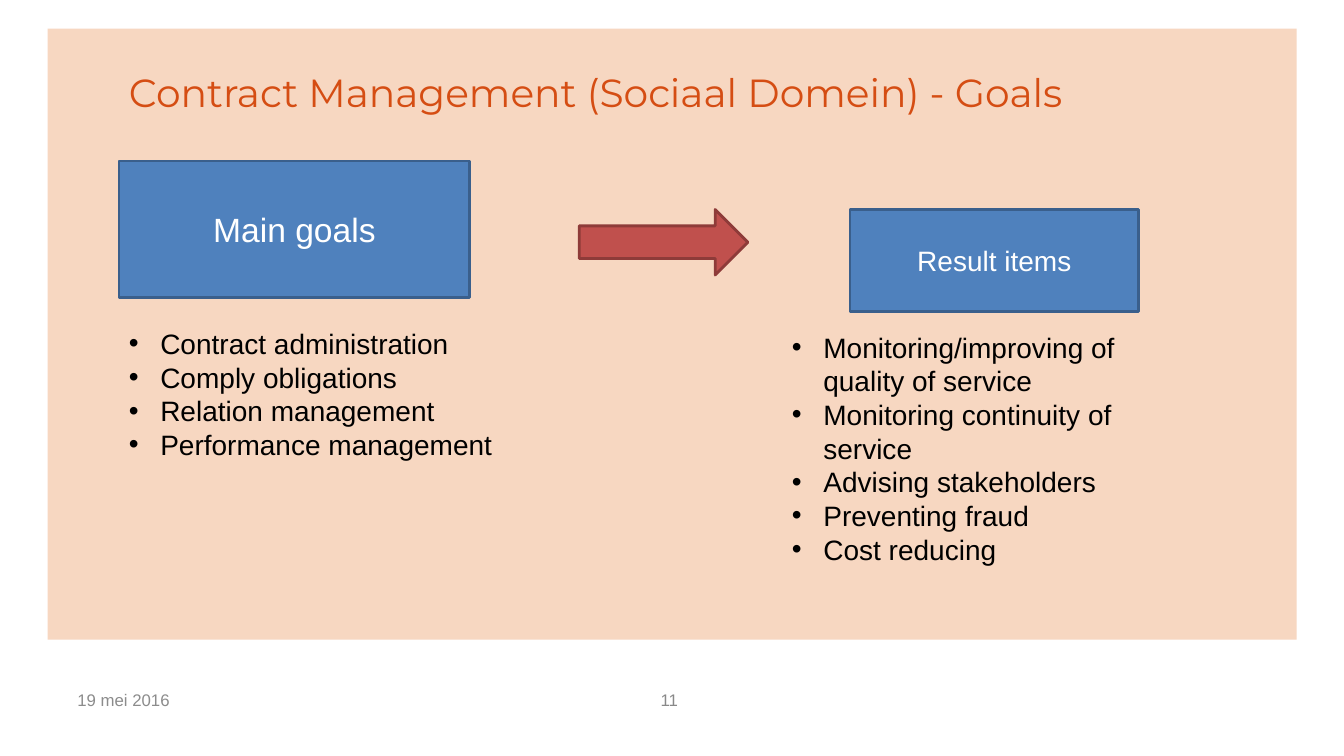
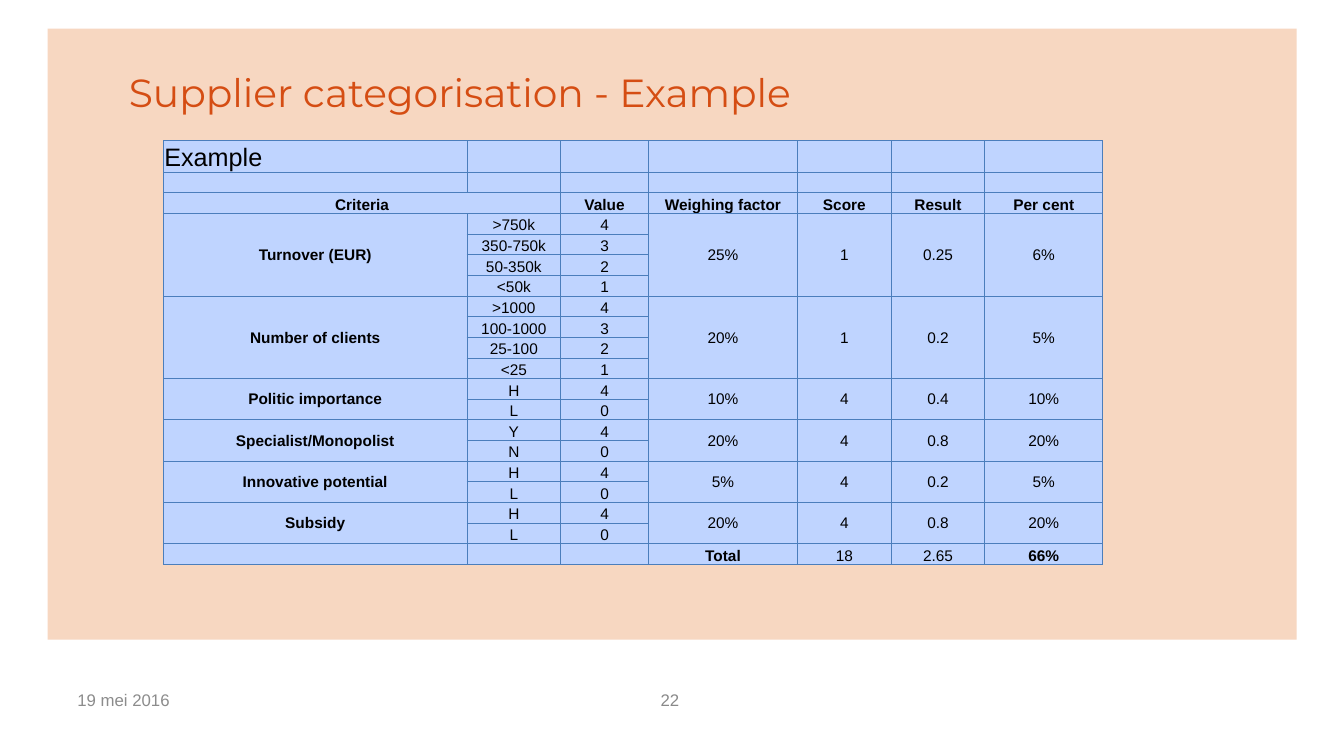
"""Build two contract management slides: goals and a supplier scoring example."""
from lxml import etree
from pptx import Presentation
from pptx.dml.color import RGBColor
from pptx.enum import shapes, text
from pptx.oxml import ns
from pptx.util import Cm, Pt

PEACH = RGBColor(0xF7, 0xD7, 0xC1)
ORANGE = RGBColor(0xD5, 0x4D, 0x13)
NUMBER_GREY = RGBColor(0x89, 0x89, 0x89)
DATE_GREY = RGBColor(0x8C, 0x8C, 0x8C)
BLUE = RGBColor(0x4F, 0x81, 0xBD)
BLUE_EDGE = RGBColor(0x3A, 0x5F, 0x8C)
RED = RGBColor(0xC0, 0x50, 0x4D)
RED_EDGE = RGBColor(0x8E, 0x3B, 0x39)
CELL_BLUE = RGBColor(0xBF, 0xD4, 0xFF)
GRID_BLUE = RGBColor(0x4B, 0x7E, 0xBC)
BLACK = RGBColor(0, 0, 0)
WHITE = RGBColor(255, 255, 255)

BODY_FONT = "Arial"
TITLE_FONT = "Montserrat"
MIDDLE = text.MSO_ANCHOR.MIDDLE
BOTTOM = text.MSO_ANCHOR.BOTTOM
TOP = text.MSO_ANCHOR.TOP
CENTER = text.PP_ALIGN.CENTER
RECTANGLE = shapes.MSO_SHAPE.RECTANGLE

COLUMN_WIDTHS = (7.65, 2.36, 2.21, 3.76, 2.36, 2.36, 2.97)
CAPTION_HEIGHT, ROW_HEIGHT = 0.8, 0.52
HEADINGS = {0: "Criteria", 2: "Value", 3: "Weighing factor",
            4: "Score", 5: "Result", 6: "Per cent"}
CRITERIA = [
    ("Turnover (EUR)", {">750k": 4, "350-750k": 3, "50-350k": 2, "<50k": 1},
     ("25%", "1", "0.25", "6%")),
    ("Number of clients", {">1000": 4, "100-1000": 3, "25-100": 2, "<25": 1},
     ("20%", "1", "0.2", "5%")),
    ("Politic importance", {"H": 4, "L": 0}, ("10%", "4", "0.4", "10%")),
    ("Specialist/Monopolist", {"Y": 4, "N": 0}, ("20%", "4", "0.8", "20%")),
    ("Innovative potential", {"H": 4, "L": 0}, ("5%", "4", "0.2", "5%")),
    ("Subsidy", {"H": 4, "L": 0}, ("20%", "4", "0.8", "20%")),
]
TOTALS = ("Total", "18", "2.65", "66%")


def set_font(para, size, color, name=BODY_FONT, bold=False):
    para.font.name = name
    para.font.size = Pt(size)
    para.font.bold = bold
    para.font.color.rgb = color


def add_text(page, place, words, size, color, name=BODY_FONT, anchor=MIDDLE):
    box = page.shapes.add_textbox(*map(Cm, place))
    frame = box.text_frame
    frame.word_wrap = True
    frame.vertical_anchor = anchor
    frame.text = words
    for para in frame.paragraphs:
        set_font(para, size, color, name)
    return box


def add_bullets(page, place, items):
    box = add_text(page, place, "", 20, BLACK, anchor=TOP)
    frame = box.text_frame
    for index, item in enumerate(items):
        para = frame.add_paragraph() if index else frame.paragraphs[0]
        para.text = item
        props = para._p.get_or_add_pPr()
        for child in list(props):
            props.remove(child)
        props.set("marL", str(Cm(0.79)))
        props.set("indent", str(Cm(-0.79)))
        etree.SubElement(props, ns.qn("a:buFont"), typeface=BODY_FONT)
        etree.SubElement(props, ns.qn("a:buChar"), char="•")
        set_font(para, 20, BLACK)


def add_block(page, kind, place, fill, edge=None, words="", size=20):
    block = page.shapes.add_shape(kind, *map(Cm, place))
    block.shadow.inherit = False
    block.fill.solid()
    block.fill.fore_color.rgb = fill
    if edge is None:
        block.line.fill.background()
    else:
        block.line.color.rgb = edge
        block.line.width = Pt(2)
    if words:
        block.text_frame.text = words
        block.text_frame.vertical_anchor = MIDDLE
        para = block.text_frame.paragraphs[0]
        para.alignment = CENTER
        set_font(para, size, WHITE)


def add_page(deck, title, number):
    page = deck.slides.add_slide(deck.slide_layouts[6])
    add_block(page, RECTANGLE, (1.2, 0.72, 31.48, 15.4), PEACH)
    add_text(page, (16.4, 17.12, 2.95, 1.02), str(number), 12, NUMBER_GREY)
    add_text(page, (3, 1.12, 28.34, 2.41), title, 28, ORANGE, TITLE_FONT)
    add_text(page, (1.7, 17.12, 7.9, 1.02), "19 mei 2016", 12, DATE_GREY)
    return page


def style_cell(cell):
    cell.margin_left = cell.margin_right = cell.margin_top = Cm(0.02)
    cell.margin_bottom = 0
    props = cell._tc.get_or_add_tcPr()
    for side in ("lnL", "lnR", "lnT", "lnB"):
        line = etree.SubElement(props, ns.qn(f"a:{side}"), w=str(Pt(0.75)))
        fill = etree.SubElement(line, ns.qn("a:solidFill"))
        etree.SubElement(fill, ns.qn("a:srgbClr"), val=str(GRID_BLUE))
    cell.fill.solid()
    cell.fill.fore_color.rgb = CELL_BLUE
    para = cell.text_frame.paragraphs[0]
    etree.SubElement(para._p, ns.qn("a:endParaRPr"), sz="1100")


def write_cell(cell, words, bold=False, anchor=BOTTOM, size=11, align=CENTER):
    cell.text = str(words)
    cell.vertical_anchor = anchor
    para = cell.text_frame.paragraphs[0]
    para.alignment = align
    set_font(para, size, BLACK, bold=bold)


def add_score_table(page):
    row_count = 4 + sum(len(levels) for _, levels, _ in CRITERIA)
    height = CAPTION_HEIGHT + (row_count - 1) * ROW_HEIGHT
    place = (4.12, 3.54, sum(COLUMN_WIDTHS), height)
    table = page.shapes.add_table(
        row_count, len(COLUMN_WIDTHS), *map(Cm, place)).table
    table.first_row = table.horz_banding = False
    for column, width in zip(table.columns, COLUMN_WIDTHS):
        column.width = Cm(width)
    for index, row in enumerate(table.rows):
        row.height = Cm(ROW_HEIGHT if index else CAPTION_HEIGHT)
    for cell in table.iter_cells():
        style_cell(cell)

    write_cell(table.cell(0, 0), "Example", size=18, align=text.PP_ALIGN.LEFT)
    table.cell(2, 0).merge(table.cell(2, 1))
    for column, heading in HEADINGS.items():
        write_cell(table.cell(2, column), heading, bold=True)

    top = 3
    for name, levels, results in CRITERIA:
        last = top + len(levels) - 1
        for column, words in zip((0, 3, 4, 5, 6), (name, *results)):
            table.cell(top, column).merge(table.cell(last, column))
            write_cell(table.cell(top, column), words, column == 0, MIDDLE)
        for row, (level, value) in enumerate(levels.items(), top):
            write_cell(table.cell(row, 1), level)
            write_cell(table.cell(row, 2), value)
        top = last + 1
    for column, words in enumerate(TOTALS, 3):
        write_cell(table.cell(top, column), words, bold=column in (3, 6))


def build_goals(deck):
    page = add_page(deck, "Contract Management (Sociaal Domein) - Goals", 11)
    add_block(page, RECTANGLE, (21.42, 5.28, 7.28, 2.57), BLUE, BLUE_EDGE,
              "Result items")
    add_bullets(page, (19.71, 8.2, 9, 7.77), [
        "Monitoring/improving of quality of service",
        "Monitoring continuity of service",
        "Advising stakeholders",
        "Preventing fraud",
        "Cost reducing",
    ])
    add_block(page, shapes.MSO_SHAPE.RIGHT_ARROW, (14.6, 5.28, 4.25, 1.65),
              RED, RED_EDGE)
    add_block(page, RECTANGLE, (3, 4.06, 8.84, 3.43), BLUE, BLUE_EDGE,
              "Main goals", 24)
    add_bullets(page, (3, 8.1, 10, 3.68), [
        "Contract administration",
        "Comply obligations",
        "Relation management",
        "Performance management",
    ])


def build_example(deck):
    page = add_page(deck, "Supplier categorisation - Example", 22)
    add_score_table(page)


def main():
    deck = Presentation()
    deck.slide_width, deck.slide_height = Cm(33.87), Cm(19.05)
    build_goals(deck)
    build_example(deck)
    deck.save("out.pptx")


if __name__ == "__main__":
    main()
